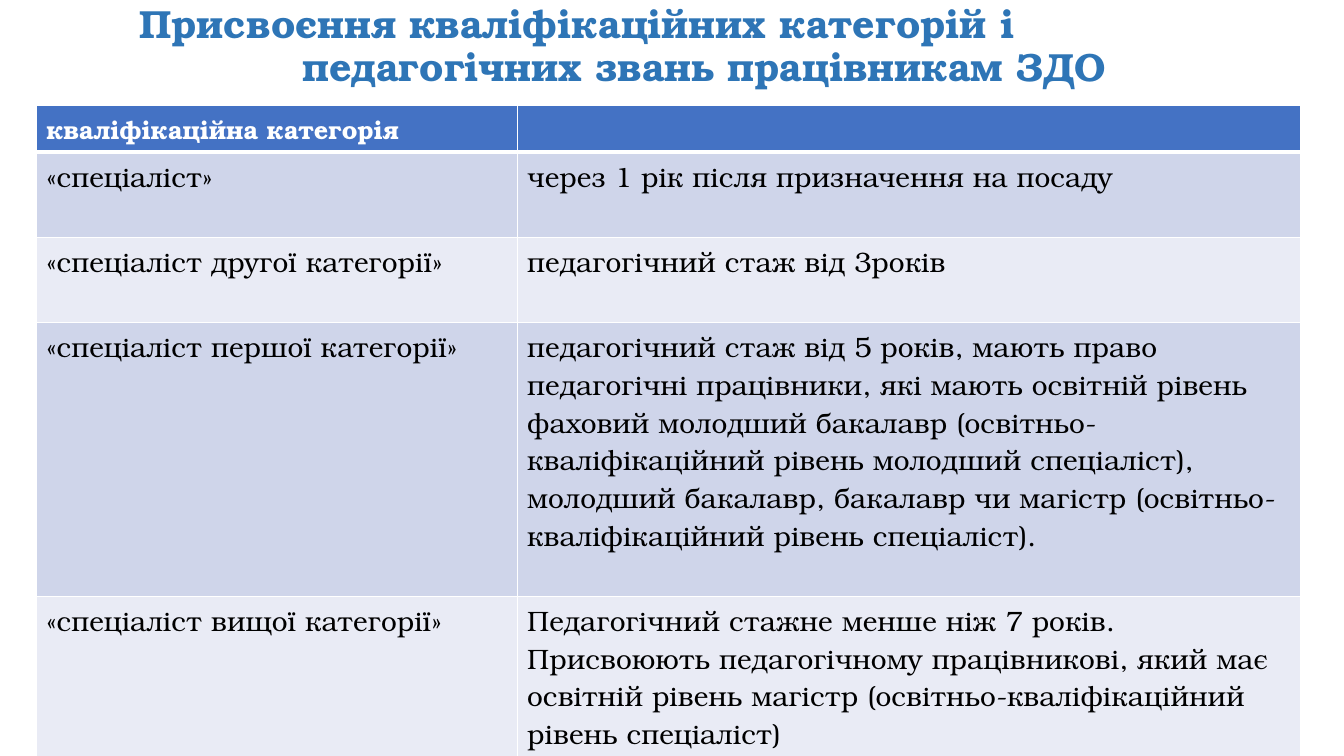
from lxml.etree import SubElement
from pptx import Presentation
from pptx.dml.color import RGBColor
from pptx.enum.text import PP_ALIGN
from pptx.oxml.ns import qn
from pptx.util import Pt

COLORS = {
    "title": "2E75B6",
    "header": "4472C4",
    "odd": "CFD5EA",
    "even": "E9EBF5",
    "white": "FFFFFF",
    "text": "000000",
}
LINE_HEIGHT = 26.9
CELL_PADDING = 7.2

# Each line of the title with its left indent
TITLE_LINES = [
    ("Присвоєння кваліфікаційних категорій і", 46),
    ("педагогічних звань працівникам ЗДО", 162),
]
# Category, requirement and the number of text lines the row has room for
CATEGORIES = [
    ("«спеціаліст»", "через 1 рік після призначення на посаду", 2),
    ("«спеціаліст другої категорії»", "педагогічний стаж від 3років", 2),
    ("«спеціаліст першої категорії»",
     "педагогічний стаж від 5 років, мають право педагогічні працівники, "
     "які мають освітній рівень фаховий молодший бакалавр "
     "(освітньо-кваліфікаційний рівень молодший спеціаліст), молодший "
     "бакалавр, бакалавр чи магістр (освітньо-кваліфікаційний рівень "
     "спеціаліст).", 7),
    ("«спеціаліст вищої категорії»",
     "Педагогічний стажне менше ніж 7 років. Присвоюють педагогічному "
     "працівникові, який має освітній рівень магістр "
     "(освітньо-кваліфікаційний рівень спеціаліст)", 4),
]


class SlideBuilder:
    font_name = "TeX Gyre Bonum"

    def __init__(self, slide):
        self.slide = slide

    def style(self, paragraph, size, color, bold=False):
        font = paragraph.font
        font.name = self.font_name
        font.size = Pt(size)
        font.bold = bold
        font.color.rgb = RGBColor.from_string(COLORS[color])
        for run in paragraph.runs:
            run.font.name = self.font_name
            run.font.size = Pt(size)
            run.font.bold = bold
            run.font.color.rgb = RGBColor.from_string(COLORS[color])

    def add_title(self, lines, left, top, width, height):
        box = self.slide.shapes.add_textbox(Pt(left), Pt(top), Pt(width), Pt(height))
        frame = box.text_frame
        frame.word_wrap = True
        frame.text = "\n".join(text for text, indent in lines)
        for paragraph, (text, indent) in zip(frame.paragraphs, lines):
            paragraph.alignment = PP_ALIGN.LEFT
            paragraph.line_spacing = 0.9
            paragraph._p.get_or_add_pPr().set("marL", str(Pt(indent)))
            self.style(paragraph, 28, "title", bold=True)

    def add_borders(self, cell, bottom, top):
        properties = cell._tc.get_or_add_tcPr()
        for side, width in (("L", 1), ("R", 1), ("T", top), ("B", bottom)):
            line = SubElement(properties, qn(f"a:ln{side}"), w=str(Pt(width)))
            fill = SubElement(line, qn("a:solidFill"))
            SubElement(fill, qn("a:srgbClr"), val=COLORS["white"])

    def fill_cell(self, cell, text, row):
        is_header = row == 0
        self.add_borders(cell, bottom=3 if is_header else 1, top=3 if row == 1 else 1)
        fill = "header" if is_header else "odd" if row % 2 else "even"
        cell.fill.solid()
        cell.fill.fore_color.rgb = RGBColor.from_string(COLORS[fill])
        cell.text_frame.text = text
        paragraph = cell.text_frame.paragraphs[0]
        if is_header:
            self.style(paragraph, 18, "white", bold=True)
        else:
            self.style(paragraph, 20, "text")

    def add_table(self, rows, heights, widths, left, top):
        table = self.slide.shapes.add_table(
            len(rows), len(widths), Pt(left), Pt(top), Pt(sum(widths)), Pt(sum(heights))
        ).table
        for column, width in zip(table.columns, widths):
            column.width = Pt(width)
        for index, (texts, height) in enumerate(zip(rows, heights)):
            table.rows[index].height = Pt(height)
            for column, text in enumerate(texts):
                self.fill_cell(table.cell(index, column), text, index)


def main():
    presentation = Presentation()
    presentation.slide_width = Pt(960)
    presentation.slide_height = Pt(540)
    slide = presentation.slides.add_slide(presentation.slide_layouts[6])
    builder = SlideBuilder(slide)
    rows = [("кваліфікаційна категорія", "")]
    rows += [(category, requirement) for category, requirement, lines in CATEGORIES]
    heights = [33]
    heights += [lines * LINE_HEIGHT + CELL_PADDING for *texts, lines in CATEGORIES]
    builder.add_table(rows, heights, widths=(343.4, 559.4), left=26, top=75)
    builder.add_title(TITLE_LINES, left=46.8, top=0, width=913, height=75)
    presentation.save("out.pptx")


if __name__ == "__main__":
    main()
